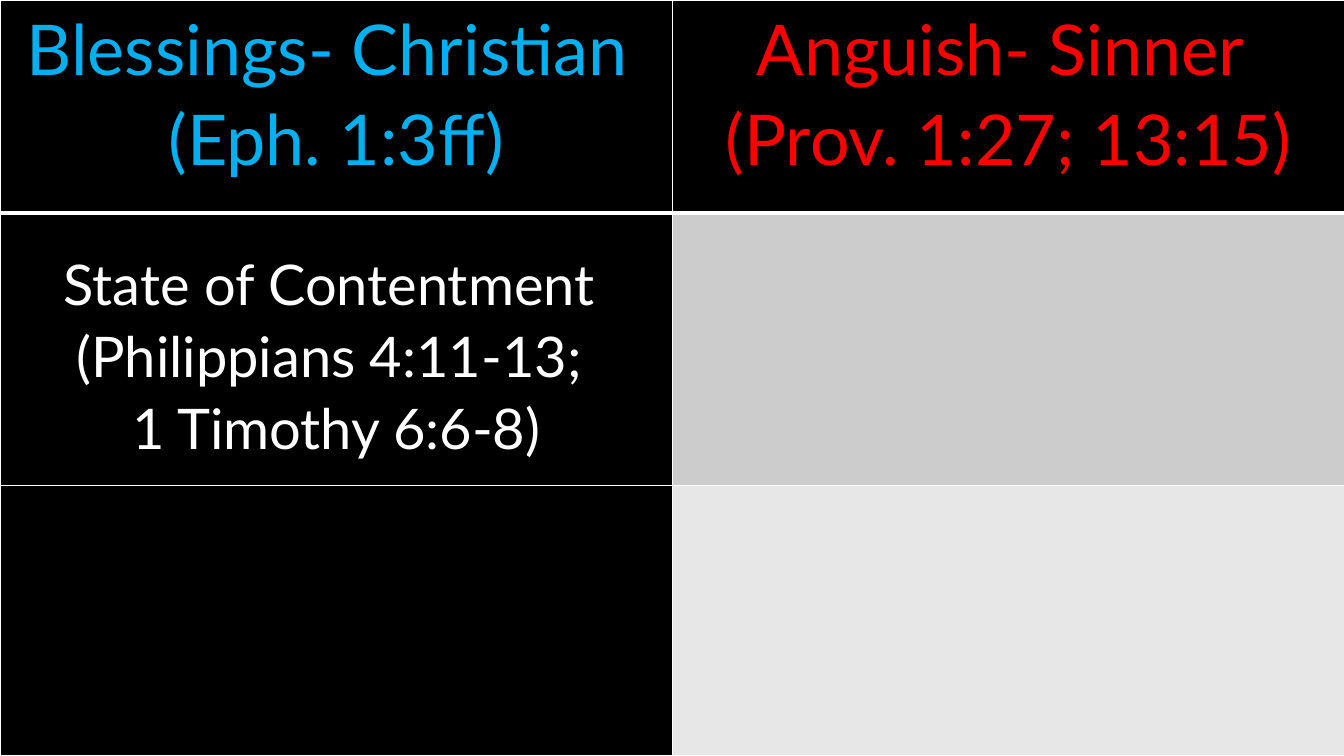
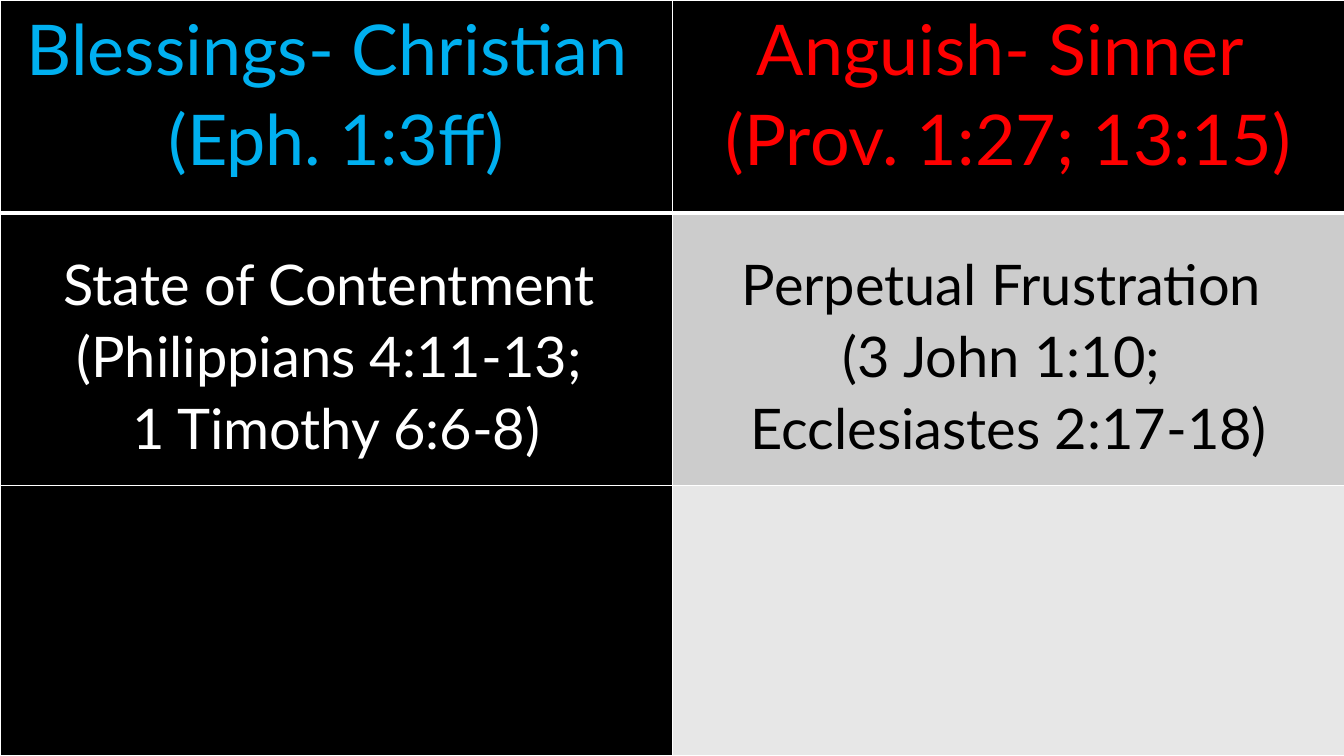
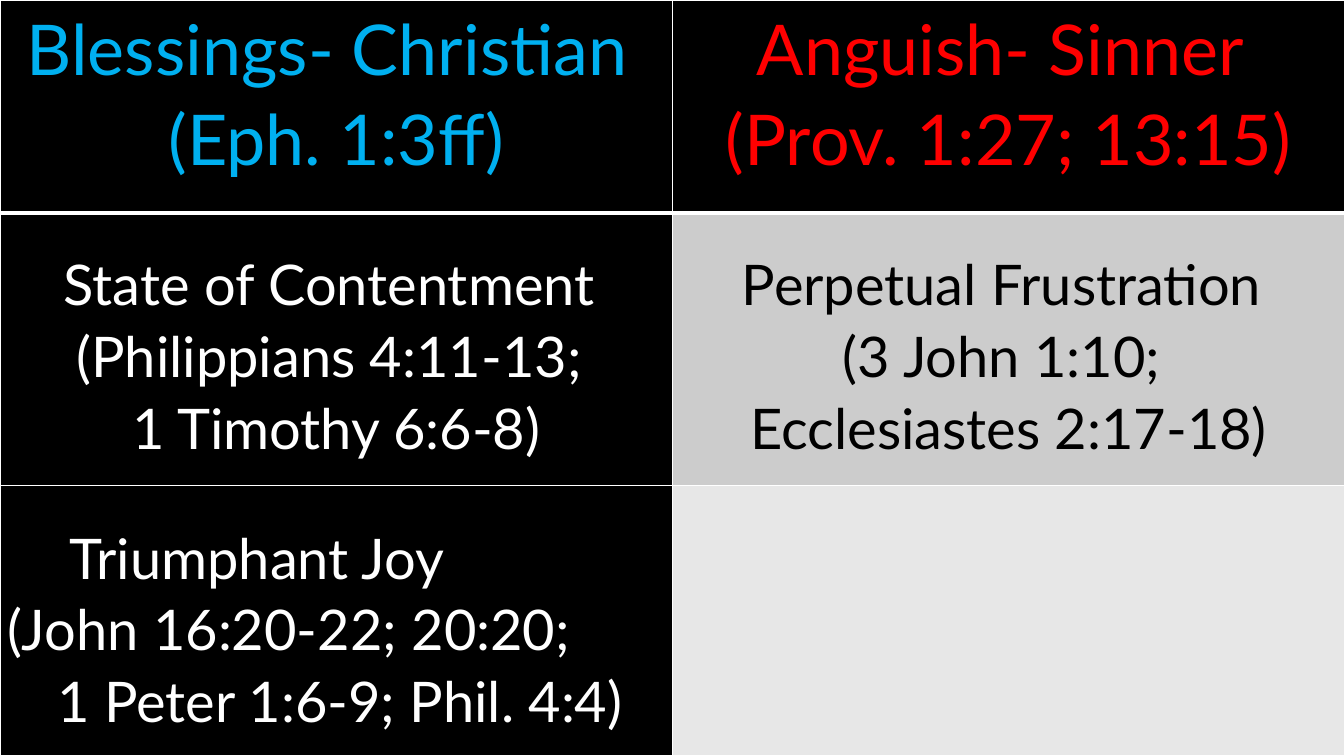
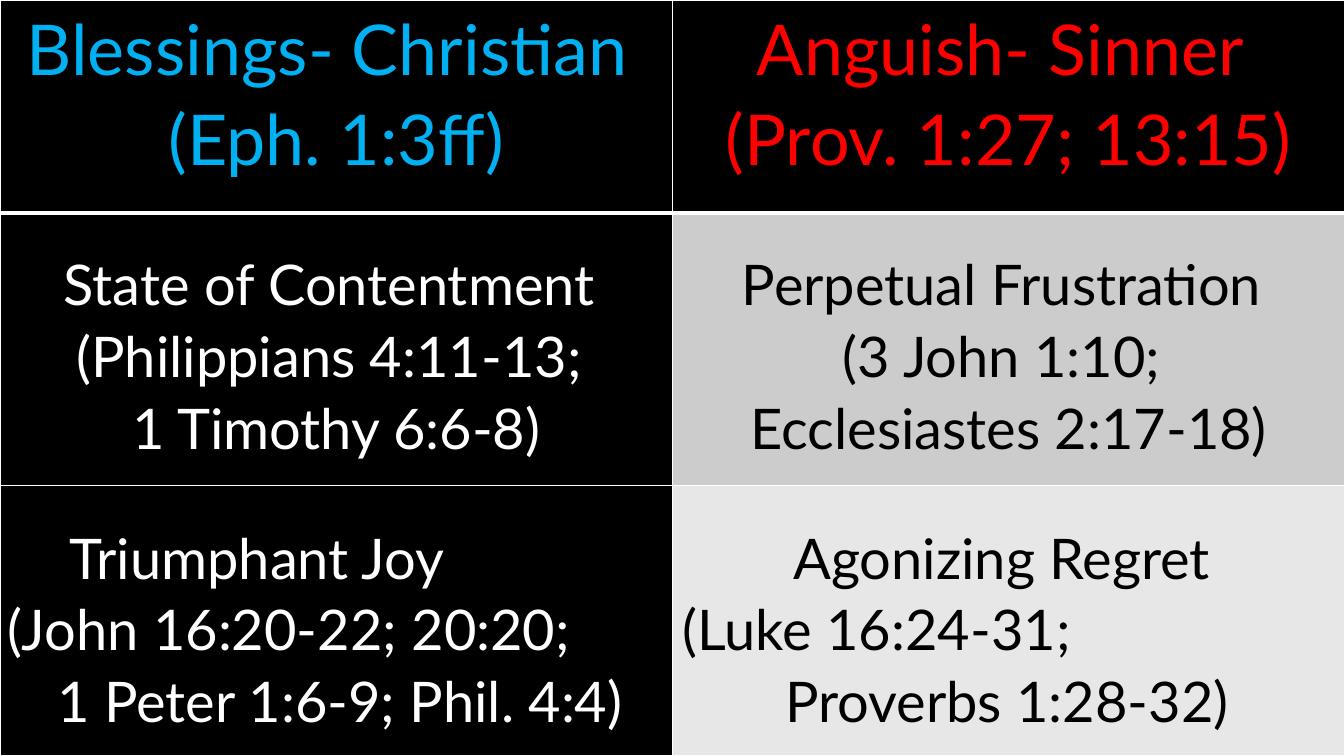
from dataclasses import dataclass

from lxml.etree import SubElement
from pptx import Presentation
from pptx.dml.color import RGBColor
from pptx.enum.text import PP_ALIGN
from pptx.oxml.ns import qn
from pptx.util import Emu, Pt

EMU_PER_PX = 9144
PAGE_WIDTH, PAGE_HEIGHT = 1333, 750
COLUMN_WIDTHS = (667, 667)
ROW_HEIGHTS = (211, 271, 268)
SIDE_INSET = 7
ANSWER_TOP_INSET = 33


@dataclass(frozen=True)
class Theme:
    font: str = "Lato"
    black: str = "000000"
    white: str = "FFFFFF"
    blessing: str = "00B0F0"
    anguish: str = "FF0000"
    grey: str = "CCCCCC"
    light_grey: str = "E7E7E7"
    heading_size: int = 50
    answer_size: int = 40
    line_spacing: float = 1.07
    thin_line: int = 1
    thick_line: int = 3


@dataclass(frozen=True)
class Line:
    text: str
    indent: int | None = None


THEME = Theme()

HEADINGS = (
    (THEME.blessing, (Line("Blessings- Christian "), Line("(Eph. 1:3ff)"))),
    (THEME.anguish, (Line("Anguish- Sinner "), Line("(Prov. 1:27; 13:15)"))),
)

ANSWERS = (
    (
        Line("State of Contentment "),
        Line("(Philippians 4:11-13; "),
        Line("1 Timothy 6:6-8)"),
    ),
    (
        Line("Perpetual Frustration "),
        Line("(3 John 1:10; "),
        Line("Ecclesiastes 2:17-18)"),
    ),
    (
        Line("Triumphant Joy", 62),
        Line("(John 16:20-22; 20:20;", 0),
        Line("1 Peter 1:6-9; Phil. 4:4)", 50),
    ),
    (
        Line("Agonizing Regret "),
        Line("(Luke 16:24-31;", 3),
        Line("Proverbs 1:28-32)", 105),
    ),
)

ANSWER_FILLS = (THEME.black, THEME.grey, THEME.black, THEME.light_grey)


def px(length):
    return Emu(length * EMU_PER_PX)


class Slides:
    def __init__(self, theme):
        self.theme = theme
        self.deck = Presentation()
        self.deck.slide_width = px(PAGE_WIDTH)
        self.deck.slide_height = px(PAGE_HEIGHT)
        self.page = None

    def add_page(self):
        self.page = self.deck.slides.add_slide(self.deck.slide_layouts[6])
        fill = self.page.background.fill
        fill.solid()
        fill.fore_color.rgb = RGBColor.from_string(self.theme.black)

    def add_grid(self):
        frame = self.page.shapes.add_table(
            len(ROW_HEIGHTS), len(COLUMN_WIDTHS),
            0, 0, px(sum(COLUMN_WIDTHS)), px(sum(ROW_HEIGHTS)),
        )
        table = frame.table
        table.first_row = False
        table.horz_banding = False
        for column, width in zip(table.columns, COLUMN_WIDTHS):
            column.width = px(width)
        for row, height in zip(table.rows, ROW_HEIGHTS):
            row.height = px(height)
        return table

    def style_cell(self, cell, color, top_line, bottom_line):
        cell.fill.solid()
        cell.fill.fore_color.rgb = RGBColor.from_string(color)
        cell.margin_left = cell.margin_right = px(SIDE_INSET)
        cell.margin_top = cell.margin_bottom = 0
        properties = cell._tc.get_or_add_tcPr()
        thin = self.theme.thin_line
        borders = (("a:lnL", thin), ("a:lnR", thin),
                   ("a:lnT", top_line), ("a:lnB", bottom_line))
        for position, (side, width) in enumerate(borders):
            line = SubElement(properties, qn(side), w=str(Pt(width)))
            paint = SubElement(line, qn("a:solidFill"))
            SubElement(paint, qn("a:srgbClr"), val=self.theme.white)
            properties.insert(position, line)

    def write_cell(self, cell, lines, size, color):
        box = cell.text_frame
        for index, line in enumerate(lines):
            para = box.add_paragraph() if index else box.paragraphs[0]
            para.line_spacing = self.theme.line_spacing
            if line.indent is None:
                para.alignment = PP_ALIGN.CENTER
            else:
                para.alignment = PP_ALIGN.LEFT
                para._p.get_or_add_pPr().set("marL", str(px(line.indent)))
            span = para.add_run()
            span.text = line.text
            span.font.name = self.theme.font
            span.font.size = Pt(size)
            span.font.color.rgb = RGBColor.from_string(color)

    def add_comparison(self, answers_shown):
        theme = self.theme
        self.add_page()
        table = self.add_grid()
        for column, (color, lines) in enumerate(HEADINGS):
            cell = table.cell(0, column)
            self.style_cell(cell, theme.black, theme.thin_line, theme.thick_line)
            self.write_cell(cell, lines, theme.heading_size, color)
        for index, (lines, fill) in enumerate(zip(ANSWERS, ANSWER_FILLS)):
            row, column = divmod(index, len(COLUMN_WIDTHS))
            cell = table.cell(row + 1, column)
            top_line = theme.thin_line if row else theme.thick_line
            self.style_cell(cell, fill, top_line, theme.thin_line)
            if index < answers_shown:
                cell.margin_top = px(ANSWER_TOP_INSET)
                color = theme.white if fill == theme.black else theme.black
                self.write_cell(cell, lines, theme.answer_size, color)


def main():
    slides = Slides(THEME)
    for answers_shown in range(1, len(ANSWERS) + 1):
        slides.add_comparison(answers_shown)
    slides.deck.save("out.pptx")


if __name__ == "__main__":
    main()
